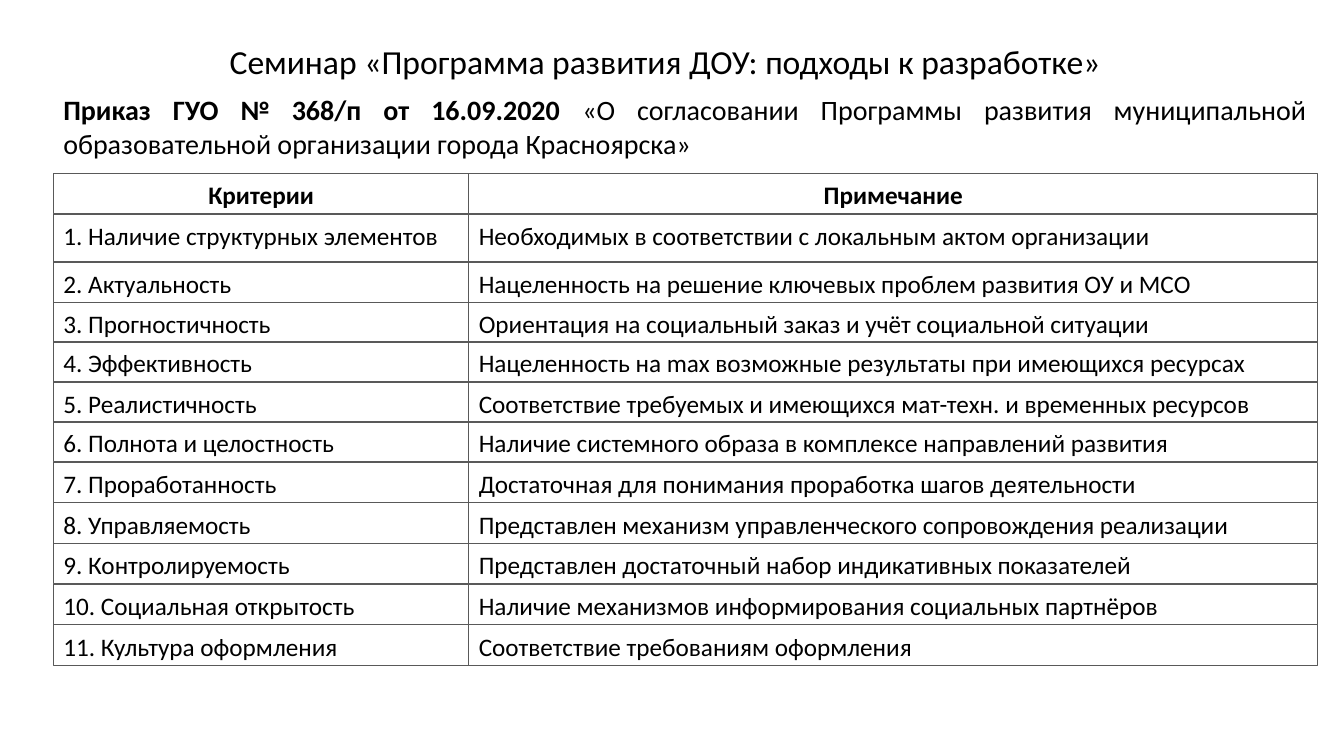
from pptx import Presentation
from pptx.dml import color
from pptx.enum import shapes, text
from pptx.util import Inches, Pt

BLACK = color.RGBColor(0, 0, 0)
GREY = color.RGBColor(0x59, 0x59, 0x59)
FONT = "Calibri"
LEFT = 0.53
SPLIT = 4.65
WIDTHS = (4.12, 8.42)
HEADS = ("Критерии", "Примечание")
ROWS = (
    (2.13, "Наличие структурных элементов", "Необходимых в соответствии с локальным актом организации"),
    (2.6, "Актуальность", "Нацеленность на решение ключевых проблем развития ОУ и МСО"),
    (3, "Прогностичность", "Ориентация на социальный заказ и учёт социальной ситуации"),
    (3.39, "Эффективность", "Нацеленность на max возможные результаты при имеющихся ресурсах"),
    (3.79, "Реалистичность", "Соответствие требуемых и имеющихся мат-техн. и временных ресурсов"),
    (4.18, "Полнота и целостность", "Наличие системного образа в комплексе направлений развития"),
    (4.59, "Проработанность", "Достаточная для понимания проработка шагов деятельности"),
    (4.99, "Управляемость", "Представлен механизм управленческого сопровождения реализации"),
    (5.39, "Контролируемость", "Представлен достаточный набор индикативных показателей"),
    (5.8, "Социальная открытость", "Наличие механизмов информирования социальных партнёров"),
    (6.2, "Культура оформления", "Соответствие требованиям оформления"),
)


def style(para, size, align, bold=None):
    para.alignment = align
    para.font.name = FONT
    para.font.size = Pt(size)
    para.font.color.rgb = BLACK
    para.font.bold = bold


def add_text(slide, box, runs, size, align):
    frame = slide.shapes.add_textbox(*map(Inches, box)).text_frame
    frame.word_wrap = True
    para = frame.paragraphs[0]
    style(para, size, align)
    for words, bold in runs:
        run = para.add_run()
        run.text = words
        run.font.bold = bold
    return para


def add_cell(group, box, words, head):
    cell = group.shapes.add_shape(shapes.MSO_SHAPE.RECTANGLE, *map(Inches, box))
    cell.shadow.inherit = False
    cell.fill.background()
    cell.line.color.rgb = GREY
    cell.line.width = Pt(0.75)
    frame = cell.text_frame
    frame.word_wrap = True
    frame.vertical_anchor = text.MSO_ANCHOR.TOP
    frame.margin_top = Inches(0.06)
    frame.margin_bottom = Inches(0.03)
    frame.text = words
    align = text.PP_ALIGN.CENTER if head else text.PP_ALIGN.LEFT
    style(frame.paragraphs[0], 18, align, head)


def add_row(slide, top, high, words, head=False):
    group = slide.shapes.add_group_shape()
    for left, width, word in zip((LEFT, SPLIT), WIDTHS, words):
        add_cell(group, (left, top, width, high), word, head)


def main():
    deck = Presentation()
    deck.slide_width, deck.slide_height = Inches(13.33), Inches(7.5)
    slide = deck.slides.add_slide(deck.slide_layouts[6])
    order = (
        ("Приказ ГУО № 368/п от 16.09.2020 ", True),
        ("«О согласовании Программы развития муниципальной образовательной организации города Красноярска»", False),
    )
    add_text(slide, (LEFT, 0.87, 12.53, 0.76), order, 20, text.PP_ALIGN.JUSTIFY)
    title = (("Семинар «Программа развития ДОУ: подходы к разработке» ", False),)
    para = add_text(slide, (LEFT, 0.4, 12.21, 0.47), title, 24, text.PP_ALIGN.CENTER)
    para.line_spacing = 0.9
    add_row(slide, 1.72, 0.4, HEADS, True)
    for num, (top, name, note) in enumerate(ROWS, 1):
        high = 0.47 if num == 1 else 0.4
        add_row(slide, top, high, (f"{num}. {name}", note))
    deck.save("out.pptx")


if __name__ == "__main__":
    main()
